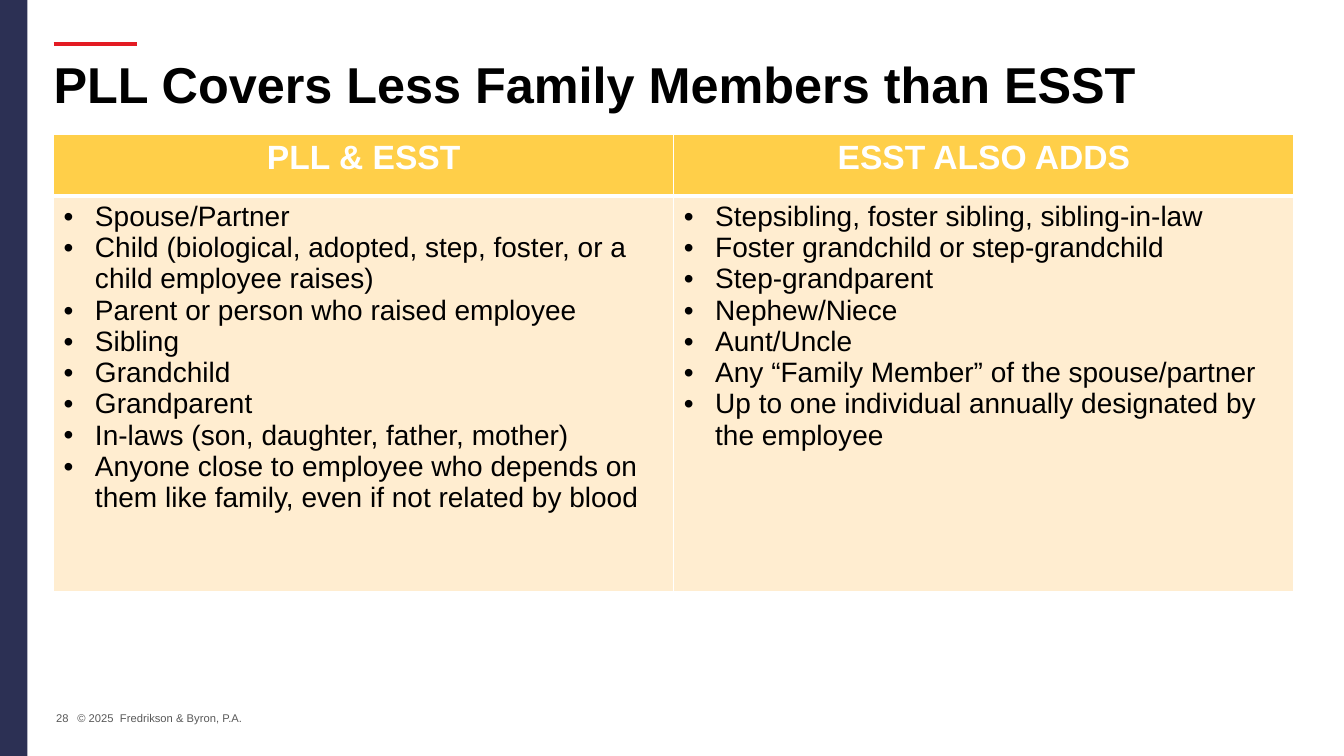
from lxml.etree import SubElement as Sub
from pptx import Presentation
from pptx.dml.color import RGBColor as Rgb
from pptx.enum.shapes import MSO_CONNECTOR as Link, MSO_SHAPE as Kind
from pptx.enum.text import MSO_ANCHOR as Anchor, PP_ALIGN as Align
from pptx.oxml.ns import qn
from pptx.util import Cm, Pt

HUES = {"navy": "2C3054", "red": "E31B23", "gold": "FFCF49", "cream": "FFEDD0",
        "white": "FFFFFF", "black": "000000", "grey": "595959"}

HEAD = {"size": Pt(24), "bold": True, "color": "white"}
BODY = {"size": Pt(20), "bold": False, "color": "black"}
TITLE = {"size": Pt(36), "bold": True, "color": "black"}
SMALL = {"size": Pt(8), "bold": False, "color": "grey"}

GROUPS = {
    "PLL & ESST": [
        "Spouse/Partner",
        "Child (biological, adopted, step, foster, or a child employee raises)",
        "Parent or person who raised employee",
        "Sibling",
        "Grandchild",
        "Grandparent",
        "In-laws (son, daughter, father, mother)",
        "Anyone close to employee who depends on them like family, "
        "even if not related by blood",
    ],
    "ESST ALSO ADDS": [
        "Stepsibling, foster sibling, sibling-in-law",
        "Foster grandchild or step-grandchild",
        "Step-grandparent",
        "Nephew/Niece",
        "Aunt/Uncle",
        "Any “Family Member” of the spouse/partner",
        "Up to one individual annually designated by the employee",
    ],
}


def hue(name):
    return Rgb.from_string(HUES[name])


def style(para, look):
    for key, value in {"name": "Arial", **look}.items():
        if key == "color":
            para.font.color.rgb = hue(value)
        else:
            setattr(para.font, key, value)


def label(slide, box, text, look, frame, para):
    """Add a one-paragraph text box; frame and para hold format values."""
    area = slide.shapes.add_textbox(*map(Cm, box)).text_frame
    area.word_wrap = True
    first = area.paragraphs[0]
    for target, values in ((area, frame), (first, para)):
        for key, value in values.items():
            setattr(target, key, value)
    first.add_run().text = text
    style(first, look)


def bullet(para):
    props = para._p.get_or_add_pPr()
    props.set("marL", str(Cm(0.79)))
    props.set("indent", str(-Cm(0.79)))
    Sub(props, qn("a:buFont"), typeface="Arial")
    Sub(props, qn("a:buChar"), char="•")


def edge(cell, thick):
    """Draw white borders, 3 pt on the thick side and 1 pt elsewhere."""
    props = cell._tc.get_or_add_tcPr()
    for side in "LRTB":
        width = Pt(3 if side == thick else 1)
        line = Sub(props, qn(f"a:ln{side}"), w=str(width))
        Sub(Sub(line, qn("a:solidFill")), qn("a:srgbClr"), val=HUES["white"])


def fill(cell, lines, look, color, thick):
    edge(cell, thick)
    cell.fill.solid()
    cell.fill.fore_color.rgb = hue(color)
    area = cell.text_frame
    for i, line in enumerate(lines):
        para = area.add_paragraph() if i else area.paragraphs[0]
        para.add_run().text = line
        if look is HEAD:
            para.alignment = Align.CENTER
        else:
            bullet(para)
        style(para, look)


def grid(slide, box, top):
    """Add the two-row table whose header row is top cm high."""
    table = slide.shapes.add_table(2, len(GROUPS), *map(Cm, box)).table
    for row, height in zip(table.rows, (top, box[3] - top)):
        row.height = Cm(height)
    for i, (name, items) in enumerate(GROUPS.items()):
        table.columns[i].width = Cm(box[2] / len(GROUPS))
        fill(table.cell(0, i), [name], HEAD, "gold", "B")
        fill(table.cell(1, i), items, BODY, "cream", "T")


def band(slide, box):
    bar = slide.shapes.add_shape(Kind.RECTANGLE, *map(Cm, box))
    bar.shadow.inherit = False
    bar.fill.solid()
    bar.fill.fore_color.rgb = hue("navy")
    bar.line.fill.background()


def title(slide, box, text):
    left, top, width, height = box
    rule = slide.shapes.add_connector(
        Link.STRAIGHT, *map(Cm, (left, top + 0.12, left + 2.11, top + 0.12)))
    Sub(rule._element.spPr, qn("a:effectLst"))
    rule.line.color.rgb = hue("red")
    rule.line.width = Pt(3)
    label(slide, box, text, TITLE,
          {"margin_left": 0, "margin_top": Cm(0.51)}, {"line_spacing": 0.9})


def footer(slide, box, page, text):
    left, top, width, height = box
    frame = {"vertical_anchor": Anchor.MIDDLE}
    label(slide, (left, top, 1.12, height), page, SMALL, frame,
          {"alignment": Align.RIGHT})
    label(slide, (left + 0.84, top, width - 0.84, height), text, SMALL, frame, {})


def main():
    deck = Presentation()
    deck.slide_width, deck.slide_height = Cm(33.87), Cm(19.05)
    slide = deck.slides.add_slide(deck.slide_layouts[6])
    band(slide, (0, 0, 0.69, 19.05))
    title(slide, (1.35, 0.99, 31.26, 2.03),
          "PLL Covers Less Family Members than ESST")
    grid(slide, (1.35, 3.39, 31.26, 11.53), 1.55)
    footer(slide, (0.86, 17.75, 5.77, 0.7), "28",
           "© 2025  Fredrikson & Byron, P.A.")
    deck.save("out.pptx")


if __name__ == "__main__":
    main()
